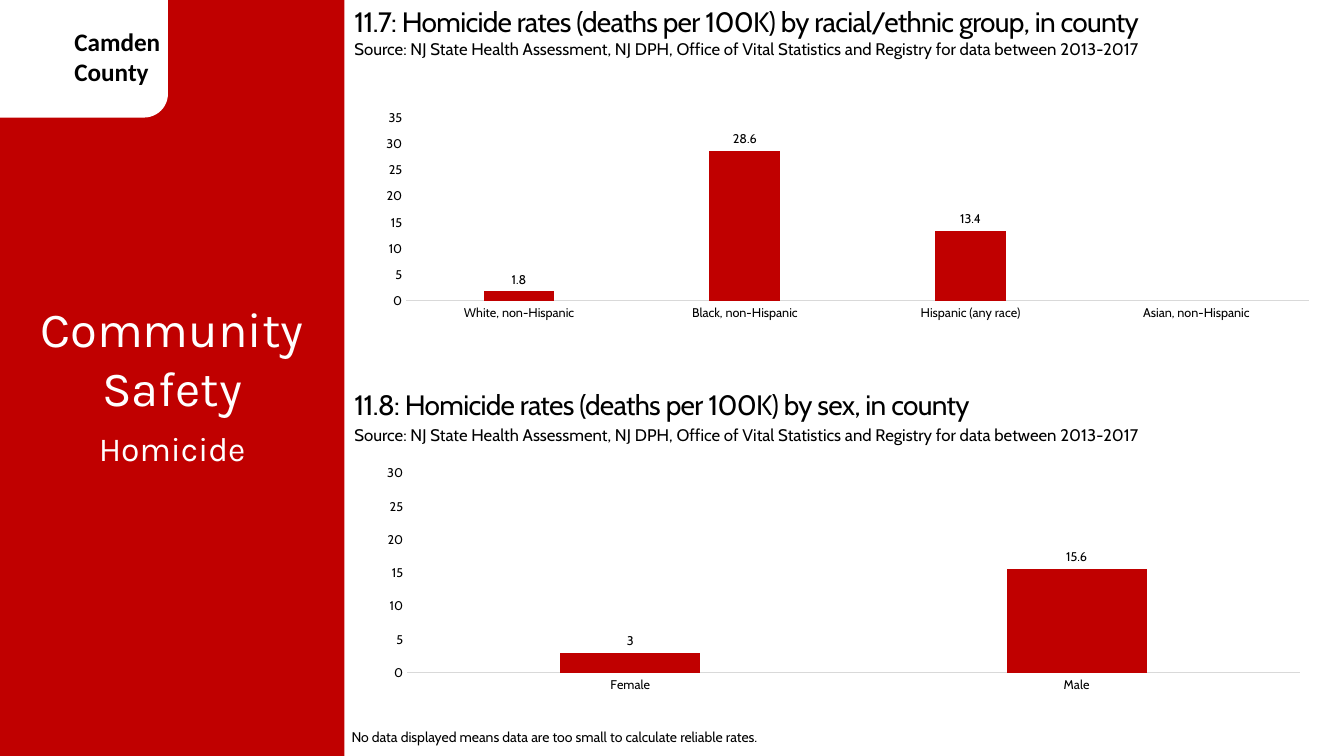
from pptx import Presentation
from pptx.chart.data import CategoryChartData
from pptx.dml.color import RGBColor
from pptx.enum.chart import XL_CHART_TYPE, XL_LABEL_POSITION, XL_TICK_MARK
from pptx.enum.shapes import MSO_SHAPE
from pptx.enum.text import MSO_AUTO_SIZE, PP_ALIGN
from pptx.oxml import parse_xml
from pptx.util import Pt

RECT, ROUNDED = MSO_SHAPE.RECTANGLE, MSO_SHAPE.ROUNDED_RECTANGLE
LEFT, CENTER = PP_ALIGN.LEFT, PP_ALIGN.CENTER
GROW = MSO_AUTO_SIZE.SHAPE_TO_FIT_TEXT
COLUMNS = XL_CHART_TYPE.COLUMN_CLUSTERED
OUTSIDE = XL_LABEL_POSITION.OUTSIDE_END
NO_TICK = XL_TICK_MARK.NONE
CHART_NS = "http://schemas.openxmlformats.org/drawingml/2006/chart"

RED, WHITE, BLACK, GRAY = "C00000", "FFFFFF", "000000", "D9D9D9"
SOURCE = ("Source: NJ State Health Assessment, NJ DPH, Office of Vital "
          "Statistics and Registry for data between 2013-2017")


def rgb(color):
    return RGBColor.from_string(color)


def set_all(target, values):
    for name, value in values.items():
        setattr(target, name, value)


class SlideBuilder:
    body_font = "Cabin"
    chart_size = 9

    def __init__(self, prs):
        self.s = prs.slides.add_slide(prs.slide_layouts[6])

    def set_font(self, font, size, name=None, color=BLACK, bold=False):
        set_all(font, {"size": Pt(size), "name": name or self.body_font, "bold": bold})
        font.color.rgb = rgb(color)

    def shape(self, kind, x, y, w, h, color):
        sp = self.s.shapes.add_shape(kind, Pt(x), Pt(y), Pt(w), Pt(h))
        sp.shadow.inherit = False
        sp.fill.solid()
        sp.fill.fore_color.rgb = rgb(color)
        sp.line.fill.background()

    def text(self, x, y, w, h, lines, size, align=LEFT, spacing=0, **font):
        tf = self.s.shapes.add_textbox(Pt(x), Pt(y), Pt(w), Pt(h)).text_frame
        set_all(tf, {"word_wrap": True, "auto_size": GROW})
        for i, line in enumerate(lines):
            p = tf.paragraphs[0] if i == 0 else tf.add_paragraph()
            p.alignment = align
            r = p.add_run()
            r.text = line
            self.set_font(r.font, size, **font)
            if spacing:
                r.font._element.set("spc", str(int(spacing * 100)))

    def chart(self, x, y, w, h, rates, top, layout=None):
        data = CategoryChartData()
        data.categories = list(rates)
        data.add_series("Series 1", list(rates.values()))
        chart = self.s.shapes.add_chart(
            COLUMNS, Pt(x), Pt(y), Pt(w), Pt(h), data).chart
        set_all(chart, {"has_legend": False, "has_title": False})
        self.set_font(chart.font, self.chart_size)

        # Axes
        category, value = chart.category_axis, chart.value_axis
        for axis in (category, value):
            set_all(axis, {"has_major_gridlines": False,
                           "major_tick_mark": NO_TICK, "minor_tick_mark": NO_TICK})
            self.set_font(axis.tick_labels.font, self.chart_size)
        category.format.line.color.rgb = rgb(GRAY)
        category.format.line.width = Pt(0.75)
        value.format.line.fill.background()
        set_all(value, {"minimum_scale": 0, "maximum_scale": top, "major_unit": 5})

        # Columns and value labels
        plot = chart.plots[0]
        set_all(plot, {"gap_width": 219, "overlap": -27,
                       "vary_by_categories": False, "has_data_labels": True})
        fill = plot.series[0].format.fill
        fill.solid()
        fill.fore_color.rgb = rgb(RED)
        set_all(plot.data_labels, {"show_value": True, "position": OUTSIDE})
        self.set_font(plot.data_labels.font, self.chart_size)
        if layout:
            self.place_plot(chart, layout)

    def place_plot(self, chart, layout):
        area = chart._chartSpace.xpath("c:chart/c:plotArea")[0]
        for old in area.xpath("c:layout"):
            area.remove(old)
        modes = '<c:xMode val="edge"/><c:yMode val="edge"/>'
        sizes = "".join(f'<c:{k} val="{v}"/>' for k, v in zip("xywh", layout))
        area.insert(0, parse_xml(
            f'<c:layout xmlns:c="{CHART_NS}"><c:manualLayout>'
            f'<c:layoutTarget val="inner"/>{modes}{sizes}'
            '</c:manualLayout></c:layout>'))


def main():
    prs = Presentation()
    set_all(prs, {"slide_width": Pt(960), "slide_height": Pt(540)})
    b = SlideBuilder(prs)

    # Side panel with county tab
    panel_w = 246
    b.shape(RECT, 0, 0, panel_w, 540, RED)
    b.shape(ROUNDED, -24, -18, 144, 102, WHITE)
    b.text(46, 15, 84, 51, ["Camden", "County"], 18, name="Calibri", bold=True)
    for y, h, title, size in ((210, 92, "Community Safety", 35),
                              (302, 36, "Homicide", 24)):
        b.text(0, y, panel_w, h, [title], size, CENTER, name="Karla", color=WHITE)

    # Chart headings and sources
    for y, source_y, heading in (
            (0, 24, "11.7: Homicide rates (deaths per 100K) by racial/ethnic group, in county"),
            (273, 300, "11.8: Homicide rates (deaths per 100K) by sex, in county")):
        b.text(panel_w, y, 710, 32, [heading], 20, spacing=-0.5)
        b.text(panel_w, source_y, 662, 22, [SOURCE], 12)

    # Charts
    by_group = {"White, non-Hispanic": 1.8, "Black, non-Hispanic": 28.6,
                "Hispanic (any race)": 13.4, "Asian, non-Hispanic": None}
    b.chart(263, 74, 679, 164, by_group, 35, layout=(0.04, 0.06, 0.95, 0.8))
    b.chart(263, 329, 679, 169, {"Female": 3, "Male": 15.6}, 30)

    # Footnote
    b.text(244, 517, 315, 19,
           ["No data displayed means data are too small to calculate reliable rates."], 10)

    prs.save("out.pptx")


if __name__ == "__main__":
    main()
